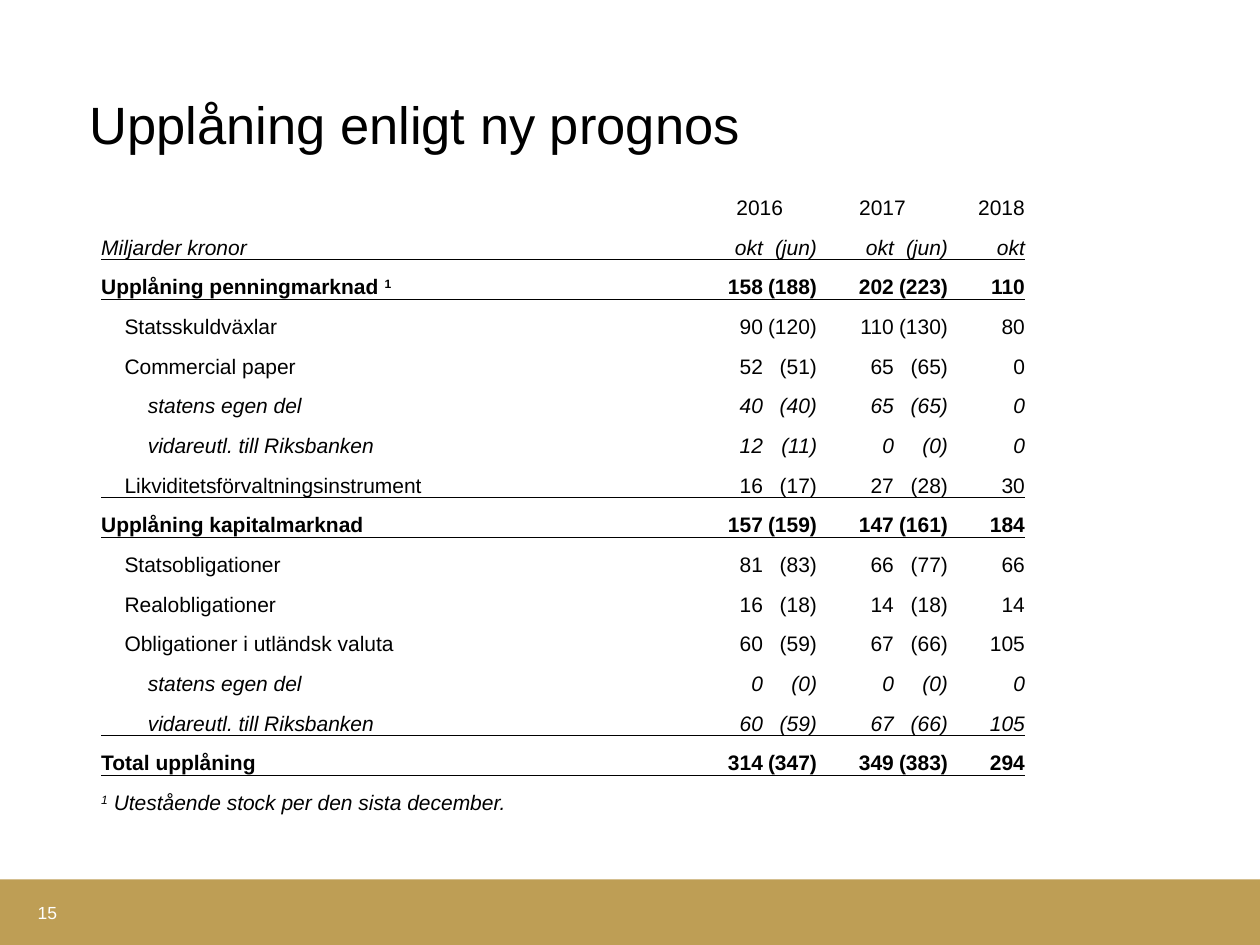
from lxml.etree import SubElement
from pptx import Presentation
from pptx.dml.color import RGBColor
from pptx.enum.shapes import MSO_SHAPE as Shape
from pptx.enum.text import MSO_ANCHOR as Anchor, MSO_AUTO_SIZE as AutoSize, PP_ALIGN as Align
from pptx.oxml.ns import qn
from pptx.util import Cm, Pt

TITLE = "Upplåning enligt ny prognos"
PAGE_NUMBER = "15"
BLACK, WHITE, GOLD = "000000", "FFFFFF", "BE9E55"
NO_STYLE = "{2D5ABB26-0587-4C30-8999-92F81FD0307C}"

COLUMN_WIDTHS = (12.12, 1.22, 1.09, 1.55, 1.09, 1.55)
ROW_HEIGHT = 0.8
INDENT = 0.47
RULED_ROWS = {1, 7, 13, 14}

# Each row: style, indent level, cell texts; "^" marks a superscript part.
ROWS = [
    ("", 0, ["", "2016", "", "2017", "", "2018"]),
    ("italic", 0, ["Miljarder kronor", "okt", "(jun)", "okt", "(jun)", "okt"]),
    ("bold", 0, ["Upplåning penningmarknad ^1", "158", "(188)", "202", "(223)", "110"]),
    ("", 1, ["Statsskuldväxlar", "90", "(120)", "110", "(130)", "80"]),
    ("", 1, ["Commercial paper", "52", "(51)", "65", "(65)", "0"]),
    ("italic", 2, ["statens egen del", "40", "(40)", "65", "(65)", "0"]),
    ("italic", 2, ["vidareutl. till Riksbanken", "12", "(11)", "0", "(0)", "0"]),
    ("", 1, ["Likviditetsförvaltningsinstrument", "16", "(17)", "27", "(28)", "30"]),
    ("bold", 0, ["Upplåning kapitalmarknad", "157", "(159)", "147", "(161)", "184"]),
    ("", 1, ["Statsobligationer", "81", "(83)", "66", "(77)", "66"]),
    ("", 1, ["Realobligationer", "16", "(18)", "14", "(18)", "14"]),
    ("", 1, ["Obligationer i utländsk valuta", "60", "(59)", "67", "(66)", "105"]),
    ("italic", 2, ["statens egen del", "0", "(0)", "0", "(0)", "0"]),
    ("italic", 2, ["vidareutl. till Riksbanken", "60", "(59)", "67", "(66)", "105"]),
    ("bold", 0, ["Total upplåning", "314", "(347)", "349", "(383)", "294"]),
    ("italic", 0, ["^1^ Utestående stock per den sista december.", "", "", "", "", ""]),
]
MERGES = [(0, 1, 2), (0, 3, 4), (15, 0, 4)]


def paint(target, color):
    target.solid()
    target.fore_color.rgb = RGBColor.from_string(color)


def set_font(para, size, color, style=""):
    font = para.font
    font.name, font.size = "Arial", Pt(size)
    font.bold, font.italic = style == "bold", style == "italic"
    paint(font.fill, color)


def clear_margins(area):
    area.margin_left = area.margin_right = area.margin_top = area.margin_bottom = 0


def fill_frame(frame, text, size, color, anchor):
    clear_margins(frame)
    frame.word_wrap = True
    frame.auto_size = AutoSize.NONE
    frame.vertical_anchor = anchor
    para = frame.paragraphs[0]
    para.text = text
    para.alignment = Align.LEFT
    set_font(para, size, color)


def add_rule(cell, side):
    properties = cell._tc.get_or_add_tcPr()
    line = SubElement(properties, qn(f"a:{side}"), w=str(Pt(0.5)))
    fill = SubElement(line, qn("a:solidFill"))
    SubElement(fill, qn("a:srgbClr"), val=BLACK)
    properties.insert(0, line)


def fill_cell(cell, text, style, alignment):
    clear_margins(cell)
    cell.vertical_anchor = Anchor.BOTTOM
    cell.fill.background()
    para = cell.text_frame.paragraphs[0]
    para.alignment = alignment
    set_font(para, 12, BLACK, style)
    for position, part in enumerate(text.split("^")):
        if part:
            span = para.add_run()
            span.text = part
            if position == 1:
                span._r.get_or_add_rPr().set("baseline", "30000")


def add_forecast(page):
    frame = page.shapes.add_table(len(ROWS), len(COLUMN_WIDTHS), Cm(2.04), Cm(3.63),
                                  Cm(sum(COLUMN_WIDTHS)), Cm(ROW_HEIGHT * len(ROWS)))
    table = frame.table
    table.first_row = table.horz_banding = False
    table._tbl.tblPr.find(qn("a:tableStyleId")).text = NO_STYLE
    for column, width in zip(table.columns, COLUMN_WIDTHS):
        column.width = Cm(width)
    centred = {(row, first) for row, first, last in MERGES if first}
    for row, (style, level, texts) in enumerate(ROWS):
        table.rows[row].height = Cm(ROW_HEIGHT)
        for column, text in enumerate(texts):
            cell = table.cell(row, column)
            alignment = Align.RIGHT if column else Align.LEFT
            if (row, column) in centred:
                alignment = Align.CENTER
            fill_cell(cell, text, style, alignment)
            if column == 0:
                cell.margin_left = Cm(INDENT * level)
            if row in RULED_ROWS:
                add_rule(cell, "lnB")
            if row - 1 in RULED_ROWS:
                add_rule(cell, "lnT")
    for row, first, last in MERGES:
        table.cell(row, first).merge(table.cell(row, last))


def main():
    deck = Presentation()
    deck.slide_width, deck.slide_height = Cm(25.4), Cm(19.05)
    page = deck.slides.add_slide(deck.slide_layouts[5])

    band = page.shapes.add_shape(Shape.RECTANGLE, 0, Cm(17.73), deck.slide_width, Cm(1.32))
    band.shadow.inherit = False
    paint(band.fill, GOLD)
    band.line.fill.background()

    title = page.shapes.title
    title.left, title.top, title.width, title.height = Cm(1.8), Cm(0.61), Cm(21.79), Cm(2.51)
    fill_frame(title.text_frame, TITLE, 30, BLACK, Anchor.BOTTOM)

    number = page.shapes.add_textbox(Cm(0.76), Cm(18.19), Cm(0.79), Cm(0.41))
    fill_frame(number.text_frame, PAGE_NUMBER, 10, WHITE, Anchor.MIDDLE)

    add_forecast(page)
    deck.save("out.pptx")


if __name__ == "__main__":
    main()
